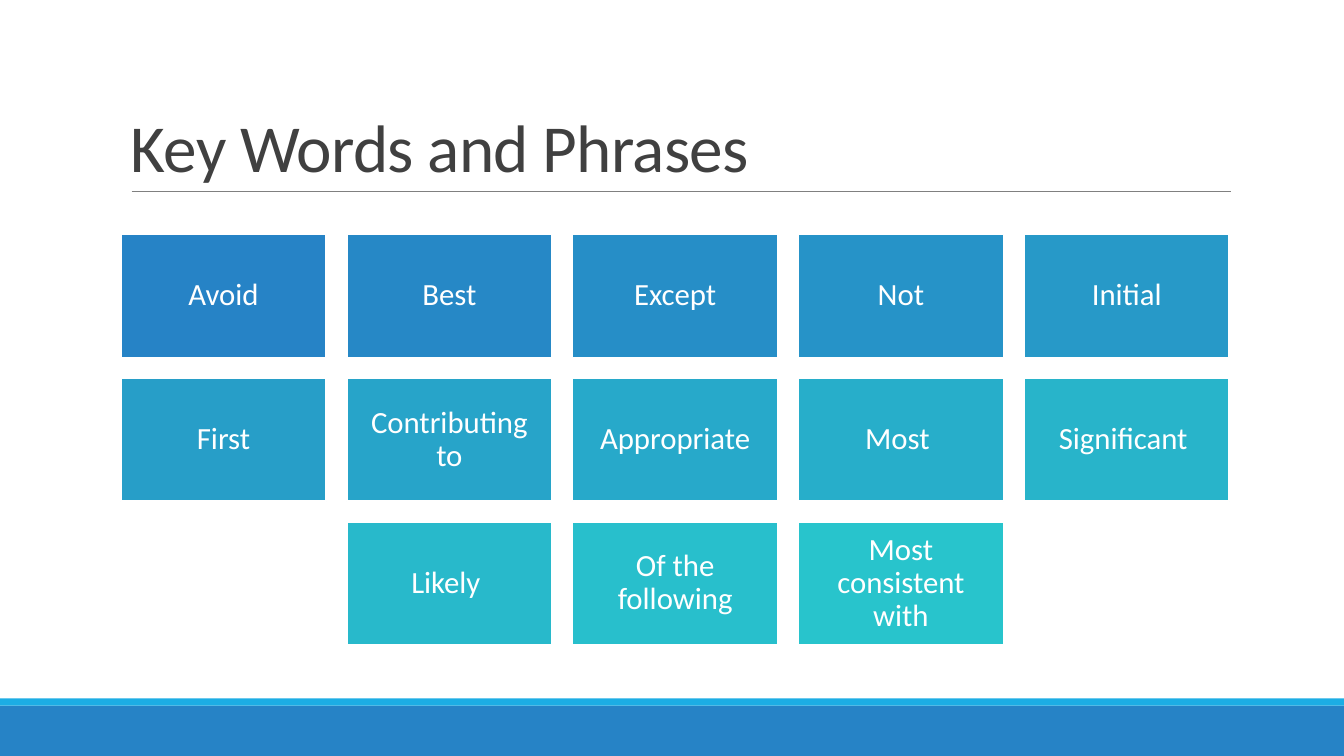
from dataclasses import dataclass

from lxml.etree import SubElement
from pptx import Presentation
from pptx.dml.color import RGBColor
from pptx.enum.shapes import MSO_CONNECTOR as CONN, MSO_SHAPE as SHAPE
from pptx.enum.text import MSO_ANCHOR as ANCHOR, PP_ALIGN as ALIGN
from pptx.oxml.ns import qn
from pptx.util import Cm, Pt

WIDTH, HEIGHT = 33.87, 19.05
LEFT, TOP = 3.05, 5.91
TILE_W, TILE_H, GAP = 5.17, 3.1, 0.52
COLUMNS = 5
ROWS = [
    ["Avoid", "Best", "Except", "Not", "Initial"],
    ["First", "Contributing to", "Appropriate", "Most ", "Significant "],
    ["Likely ", "Of the following", "Most consistent with"],
]


@dataclass(frozen=True)
class Theme:
    """Colours and type sizes of the deck."""
    font: str = "Calibri"
    band: str = "2683C6"
    stripe: str = "1CADE4"
    tile_first: str = "2683C6"
    tile_last: str = "28C4CC"
    title: str = "404040"
    rule: str = "808080"
    light: str = "FFFFFF"
    title_size: int = 48
    tile_size: int = 22

    def tile_fill(self, share):
        """Blend the first tile colour into the last one."""
        first, last = map(RGBColor.from_string, (self.tile_first, self.tile_last))
        return str(RGBColor(*(round(a + (b - a) * share) for a, b in zip(first, last))))


class Deck:
    """Draws styled elements on the current slide."""

    def __init__(self, prs, theme):
        """Add a blank slide to draw on."""
        self.theme = theme
        self.s = prs.slides.add_slide(prs.slide_layouts[6])

    def text(self, sp, words, size, color, spacing, inset, align, anchor, tracking=0):
        """Put one formatted paragraph into a shape."""
        tf = sp.text_frame
        frame = {"word_wrap": True, "vertical_anchor": anchor,
                 "margin_left": Cm(inset[0]), "margin_right": Cm(inset[0]),
                 "margin_top": Cm(inset[1]), "margin_bottom": Cm(inset[1])}
        p = tf.paragraphs[0]
        r = p.add_run()
        r.text = words
        font = {"name": self.theme.font, "size": Pt(size)}
        para = {"alignment": align, "line_spacing": spacing}
        for target, values in ((tf, frame), (p, para), (r.font, font)):
            for name, value in values.items():
                setattr(target, name, value)
        r.font.color.rgb = RGBColor.from_string(color)
        if tracking:
            r.font._element.set("spc", str(tracking))

    def box(self, x, y, w, h, fill, line=None):
        """Draw a filled rectangle, outlined if a line colour is given."""
        sp = self.s.shapes.add_shape(SHAPE.RECTANGLE, Cm(x), Cm(y), Cm(w), Cm(h))
        sp.shadow.inherit = False
        sp.fill.solid()
        sp.fill.fore_color.rgb = RGBColor.from_string(fill)
        if line:
            sp.line.color.rgb = RGBColor.from_string(line)
            sp.line.width = Pt(1.25)
        else:
            sp.line.fill.background()
        return sp

    def tile(self, x, y, words, fill):
        """Draw one key word tile."""
        sp = self.box(x, y, TILE_W, TILE_H, fill, self.theme.light)
        self.text(sp, words, self.theme.tile_size, self.theme.light, 0.9,
                  (0.23, 0.23), ALIGN.CENTER, ANCHOR.MIDDLE)

    def title(self, x, y, w, h, words):
        """Add the slide title."""
        sp = self.s.shapes.add_textbox(Cm(x), Cm(y), Cm(w), Cm(h))
        self.text(sp, words, self.theme.title_size, self.theme.title, 0.85,
                  (0.25, 0.13), ALIGN.LEFT, ANCHOR.BOTTOM, -50)

    def rule(self, x1, x2, y):
        """Draw a thin horizontal line."""
        line = self.s.shapes.add_connector(CONN.STRAIGHT, Cm(x1), Cm(y), Cm(x2), Cm(y))
        line.line.color.rgb = RGBColor.from_string(self.theme.rule)
        line.line.width = Pt(0.5)
        SubElement(line._element.spPr, qn("a:effectLst"))


def main():
    """Build and save the slide."""
    prs = Presentation()
    prs.slide_width, prs.slide_height = Cm(WIDTH), Cm(HEIGHT)
    theme = Theme()
    deck = Deck(prs, theme)
    deck.box(0, 17.78, WIDTH, 1.27, theme.band)
    deck.box(0, 17.6, WIDTH, 0.18, theme.stripe)
    deck.rule(3.32, 31.01, 4.83)
    deck.title(LEFT, 0.79, 27.94, 4.04, "Key Words and Phrases")

    last = sum(map(len, ROWS)) - 1
    count = 0
    for row, words in enumerate(ROWS):
        indent = (COLUMNS - len(words)) / 2
        for col, word in enumerate(words):
            deck.tile(LEFT + (col + indent) * (TILE_W + GAP),
                      TOP + row * (TILE_H + GAP), word, theme.tile_fill(count / last))
            count += 1
    prs.save("out.pptx")


if __name__ == "__main__":
    main()
